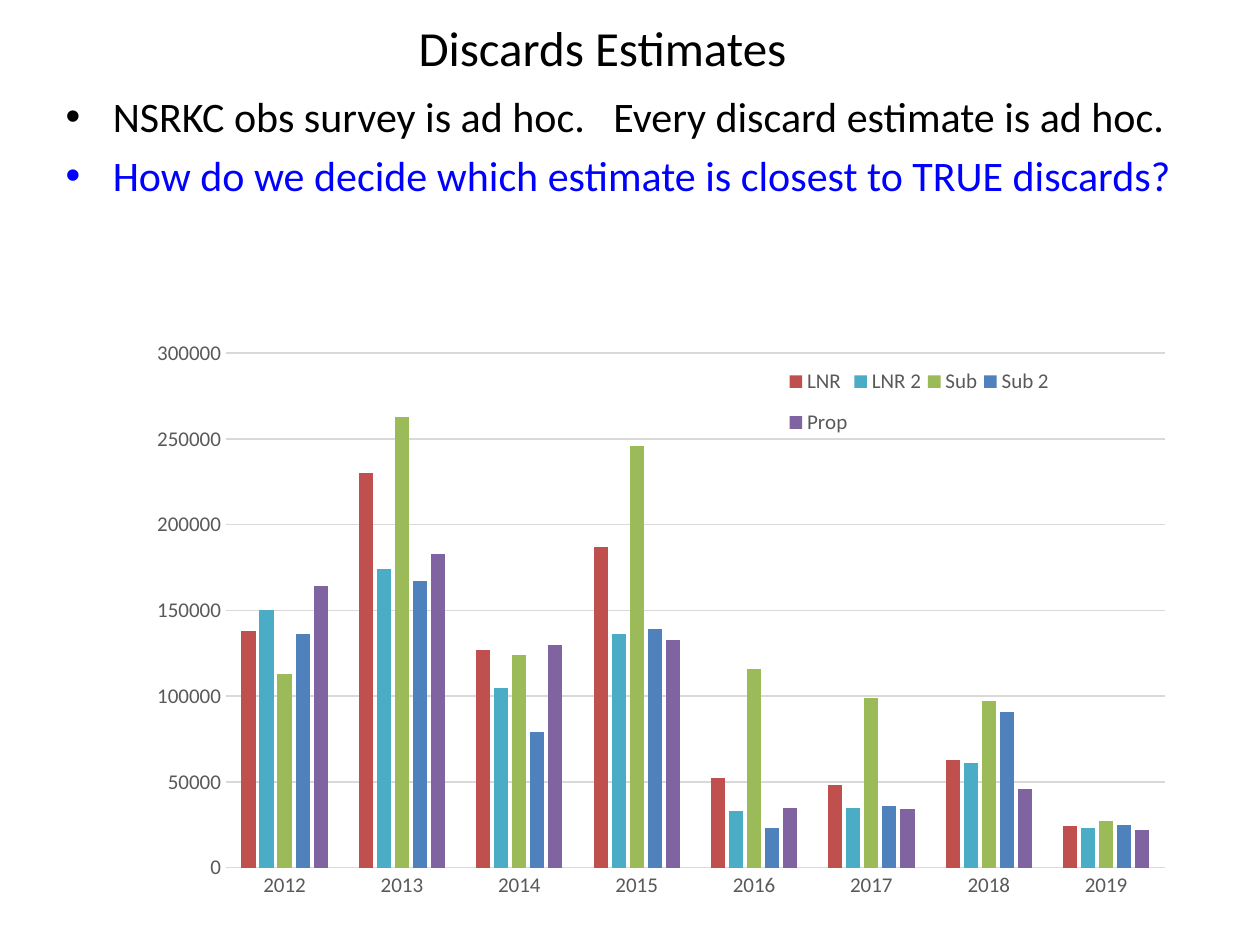
import pptx
import pptx.chart.data
import pptx.dml.color
import pptx.enum.chart
import pptx.enum.text
import pptx.oxml
import pptx.oxml.ns
import pptx.util
from pptx.util import Inches

# Content
TITLE = "Discards Estimates "
BULLETS = [
    ("NSRKC obs survey is ad hoc.   Every discard estimate is ad hoc.", "000000"),
    ("How do we decide which estimate is closest to TRUE discards?", "0000FF"),
]
YEARS = ["2012", "2013", "2014", "2015", "2016", "2017", "2018", "2019"]
ESTIMATES = [
    ("LNR", "C0504D", [138000, 230000, 127000, 187000, 52000, 48000, 63000, 24000]),
    ("LNR 2", "4BACC6", [150000, 174000, 105000, 136000, 33000, 35000, 61000, 23000]),
    ("Sub", "9BBB59", [113000, 263000, 124000, 246000, 116000, 99000, 97000, 27000]),
    ("Sub 2", "4F81BD", [136000, 167000, 79000, 139000, 23000, 36000, 91000, 25000]),
    ("Prop", "8064A2", [164000, 183000, 130000, 133000, 35000, 34000, 46000, 22000]),
]
GREY, PALE = "595959", "D9D9D9"


def color(value):
    return pptx.dml.color.RGBColor.from_string(value)


def set_font(font, size, value):
    font.name = "Calibri"
    font.size = pptx.util.Pt(size)
    font.color.rgb = color(value)


def set_line(line, value):
    line.width = pptx.util.Pt(0.75)
    line.color.rgb = color(value)


def place(shape, left, top, width, height):
    shape.left, shape.top = Inches(left), Inches(top)
    shape.width, shape.height = Inches(width), Inches(height)


def set_layout(parent, index, bounds, inner=False):
    """Place a chart part by fractions of the chart area."""
    for old in parent.findall(pptx.oxml.ns.qn("c:layout")):
        parent.remove(old)
    target = '<c:layoutTarget val="inner"/>' if inner else ""
    modes = "".join(f'<c:{side}Mode val="edge"/>' for side in "xy")
    sizes = "".join(f'<c:{key} val="{value}"/>' for key, value in zip("xywh", bounds))
    parent.insert(index, pptx.oxml.parse_xml(
        f'<c:layout {pptx.oxml.ns.nsdecls("c")}><c:manualLayout>'
        f"{target}{modes}{sizes}</c:manualLayout></c:layout>"))


deck = pptx.Presentation()
deck.slide_width, deck.slide_height = Inches(10), Inches(7.5)
page = deck.slides.add_slide(deck.slide_layouts[1])

# Title
title = page.shapes.title
place(title, 0.17, 0, 9.31, 0.75)
title.text_frame.text = TITLE
set_font(title.text_frame.paragraphs[0].font, 28, "000000")

# Bullets
body = page.placeholders[1]
place(body, 0.42, 0.67, 9.42, 1.08)
frame = body.text_frame
frame.auto_size = pptx.enum.text.MSO_AUTO_SIZE.NONE
frame.text = "\n".join(text for text, _ in BULLETS)
for para, (_, value) in zip(frame.paragraphs, BULLETS):
    set_font(para.font, 24, value)

# Chart
data = pptx.chart.data.CategoryChartData(number_format="0")
data.categories = YEARS
for name, _, values in ESTIMATES:
    data.add_series(name, values)
chart = page.shapes.add_chart(
    pptx.enum.chart.XL_CHART_TYPE.COLUMN_CLUSTERED,
    Inches(0.58), Inches(2.08), Inches(8.67), Inches(5.17), data).chart
set_font(chart.font, 12, "000000")
chart.has_title = False
plot = chart.plots[0]
plot.gap_width, plot.overlap = 219, -27
plot.vary_by_categories = False
for series, (_, value, _) in zip(plot.series, ESTIMATES):
    series.format.fill.solid()
    series.format.fill.fore_color.rgb = color(value)
set_layout(chart.element.chart.plotArea if hasattr(chart, "element")
           else chart._chartSpace.chart.plotArea, 0, (0.14, 0.14, 0.86, 0.79), True)

# Axes
for axis in (chart.category_axis, chart.value_axis):
    set_font(axis.tick_labels.font, 12, GREY)
    axis.major_tick_mark = pptx.enum.chart.XL_TICK_MARK.NONE
    axis.minor_tick_mark = pptx.enum.chart.XL_TICK_MARK.NONE
set_line(chart.category_axis.format.line, PALE)
scale = chart.value_axis
scale.minimum_scale, scale.maximum_scale, scale.major_unit = 0, 300000, 50000
scale.tick_labels.number_format = "0"
scale.tick_labels.number_format_is_linked = False
scale.format.line.fill.background()
set_line(scale.major_gridlines.format.line, PALE)

# Legend
chart.has_legend = True
legend = chart.legend
legend.position = pptx.enum.chart.XL_LEGEND_POSITION.BOTTOM
legend.include_in_layout = False
set_font(legend.font, 12, GREY)
set_layout(legend._element, 1, (0.65, 0.14, 0.25, 0.15))

deck.save("out.pptx")
